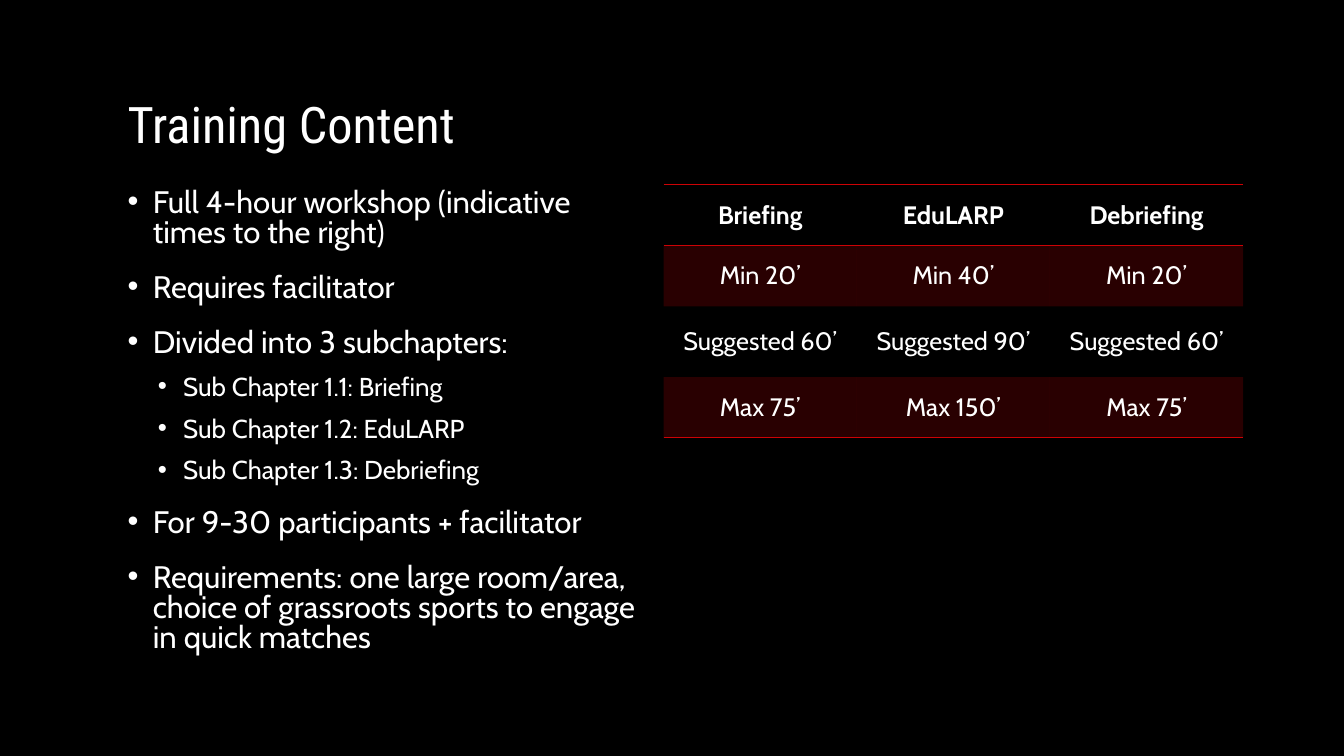
"""Build the training content slide with an outline and a table of session times."""
from dataclasses import dataclass
from typing import Any

import lxml.etree
import pptx
import pptx.dml.color
import pptx.enum.text
import pptx.oxml.ns
import pptx.util

Pt = pptx.util.Pt
WHITE = pptx.dml.color.RGBColor(0xFF, 0xFF, 0xFF)
BLACK = pptx.dml.color.RGBColor(0x00, 0x00, 0x00)
RED = pptx.dml.color.RGBColor(0xCD, 0x02, 0x05)
BODY_FONT = "Cabin"
TITLE_FORMAT = {"name": "Roboto Condensed", "size": Pt(36), "bold": False}
CELL_FORMAT = {"name": BODY_FONT, "size": Pt(18)}
COLUMN_WIDTH = 138


@dataclass(frozen=True)
class Level:
    """Layout of one outline level, in points."""
    size: float
    margin: float
    before: float


@dataclass(frozen=True)
class Item:
    """One line of the outline."""
    text: str
    level: int = 0


@dataclass(frozen=True)
class Row:
    """One table row, with its height in points."""
    texts: tuple[str, str, str]
    height: float = 43.4
    shaded: bool = False
    bold: bool = False
    top: bool = False
    bottom: bool = False


LEVELS = (Level(22.2, 18, 18), Level(18.5, 39.6, 12))
ITEMS = (
    Item("Full 4-hour workshop (indicative times to the right)"),
    Item("Requires facilitator"),
    Item("Divided into 3 subchapters:"),
    Item("Sub Chapter 1.1: Briefing", 1),
    Item("Sub Chapter 1.2: EduLARP", 1),
    Item("Sub Chapter 1.3: Debriefing", 1),
    Item("For 9-30 participants + facilitator"),
    Item("Requirements: one large room/area, choice of grassroots sports to engage in quick matches"),
)
ROWS = (
    Row(("Briefing", "EduLARP", "Debriefing"), bold=True, top=True, bottom=True),
    Row(("Min 20’", "Min 40’", "Min 20’"), shaded=True, top=True),
    Row(("Suggested 60’", "Suggested 90’", "Suggested 60’"), height=50.5),
    Row(("Max 75’", "Max 150’", "Max 75’"), shaded=True, bottom=True),
)


def apply(target: Any, values: dict[str, Any]) -> None:
    """Set every attribute named in the dict."""
    for name, value in values.items():
        setattr(target, name, value)


def add_element(parent: Any, tag: str, **attributes: str) -> Any:
    """Append a DrawingML element."""
    return lxml.etree.SubElement(parent, pptx.oxml.ns.qn(tag), attributes)


def style_text(para: Any, values: dict[str, Any]) -> None:
    """Format a paragraph's font in white."""
    apply(para.font, values)
    para.font.color.rgb = WHITE


def place(box: Any, left: float, top: float, width: float, height: float) -> None:
    """Move and size a placeholder, in points."""
    apply(box, {"left": Pt(left), "top": Pt(top), "width": Pt(width), "height": Pt(height)})


def fill_title(box: Any) -> None:
    """Write the slide title."""
    place(box, 84, 24, 792, 90)
    box.text_frame.text = "Training Content"
    apply(box.text_frame, {"word_wrap": True,
                           "auto_size": pptx.enum.text.MSO_AUTO_SIZE.NONE,
                           "vertical_anchor": pptx.enum.text.MSO_ANCHOR.BOTTOM})
    para = box.text_frame.paragraphs[0]
    apply(para, {"alignment": pptx.enum.text.PP_ALIGN.LEFT, "line_spacing": 0.9})
    style_text(para, TITLE_FORMAT)


def fill_outline(box: Any) -> None:
    """Write the bulleted outline."""
    place(box, 84, 132, 381.6, 342)
    frame = box.text_frame
    apply(frame, {"word_wrap": True,
                  "auto_size": pptx.enum.text.MSO_AUTO_SIZE.NONE,
                  "vertical_anchor": pptx.enum.text.MSO_ANCHOR.TOP})
    for index, item in enumerate(ITEMS):
        para = frame.add_paragraph() if index else frame.paragraphs[0]
        level = LEVELS[item.level]
        apply(para, {"text": item.text, "level": item.level, "line_spacing": 0.8,
                     "space_before": Pt(level.before if index else 0),
                     "space_after": Pt(0)})
        properties = para._p.get_or_add_pPr()
        properties.set("marL", str(Pt(level.margin)))
        properties.set("indent", str(Pt(-18)))
        add_element(properties, "a:buFont", typeface="Arial")
        add_element(properties, "a:buChar", char="•")
        style_text(para, {"name": BODY_FONT, "size": Pt(level.size)})


def style_cell(cell: Any, row: Row) -> None:
    """Set the fill and the four borders of a cell."""
    properties = cell._tc.get_or_add_tcPr()
    ruled = {"a:lnL": False, "a:lnR": False, "a:lnT": row.top, "a:lnB": row.bottom}
    for tag, visible in ruled.items():
        line = add_element(properties, tag, w=str(Pt(1)))
        paint = add_element(line, "a:solidFill" if visible else "a:noFill")
        if visible:
            add_element(paint, "a:srgbClr", val=str(RED))
    if row.shaded:
        paint = add_element(properties, "a:solidFill")
        color = add_element(paint, "a:srgbClr", val=str(RED))
        add_element(color, "a:alpha", val="20000")
    else:
        cell.fill.background()


def add_times(page: Any) -> None:
    """Add the table of session times."""
    columns = len(ROWS[0].texts)
    table = page.shapes.add_table(
        len(ROWS), columns, Pt(474), Pt(132), Pt(columns * COLUMN_WIDTH),
        Pt(sum(row.height for row in ROWS))).table
    apply(table, {"first_row": False, "horz_banding": False})
    for column in table.columns:
        column.width = Pt(COLUMN_WIDTH)
    for line, row in zip(table.rows, ROWS):
        line.height = Pt(row.height)
        for cell, text in zip(line.cells, row.texts):
            apply(cell, {"text": text, "vertical_anchor": pptx.enum.text.MSO_ANCHOR.MIDDLE})
            style_cell(cell, row)
            para = cell.text_frame.paragraphs[0]
            para.alignment = pptx.enum.text.PP_ALIGN.CENTER
            style_text(para, CELL_FORMAT | {"bold": row.bold})


def main() -> None:
    """Build and save the deck."""
    deck = pptx.Presentation()
    apply(deck, {"slide_width": Pt(960), "slide_height": Pt(540)})
    page = deck.slides.add_slide(deck.slide_layouts[1])
    page.background.fill.solid()
    page.background.fill.fore_color.rgb = BLACK
    fill_title(page.shapes.title)
    fill_outline(page.placeholders[1])
    add_times(page)
    deck.save("out.pptx")


if __name__ == "__main__":
    main()
